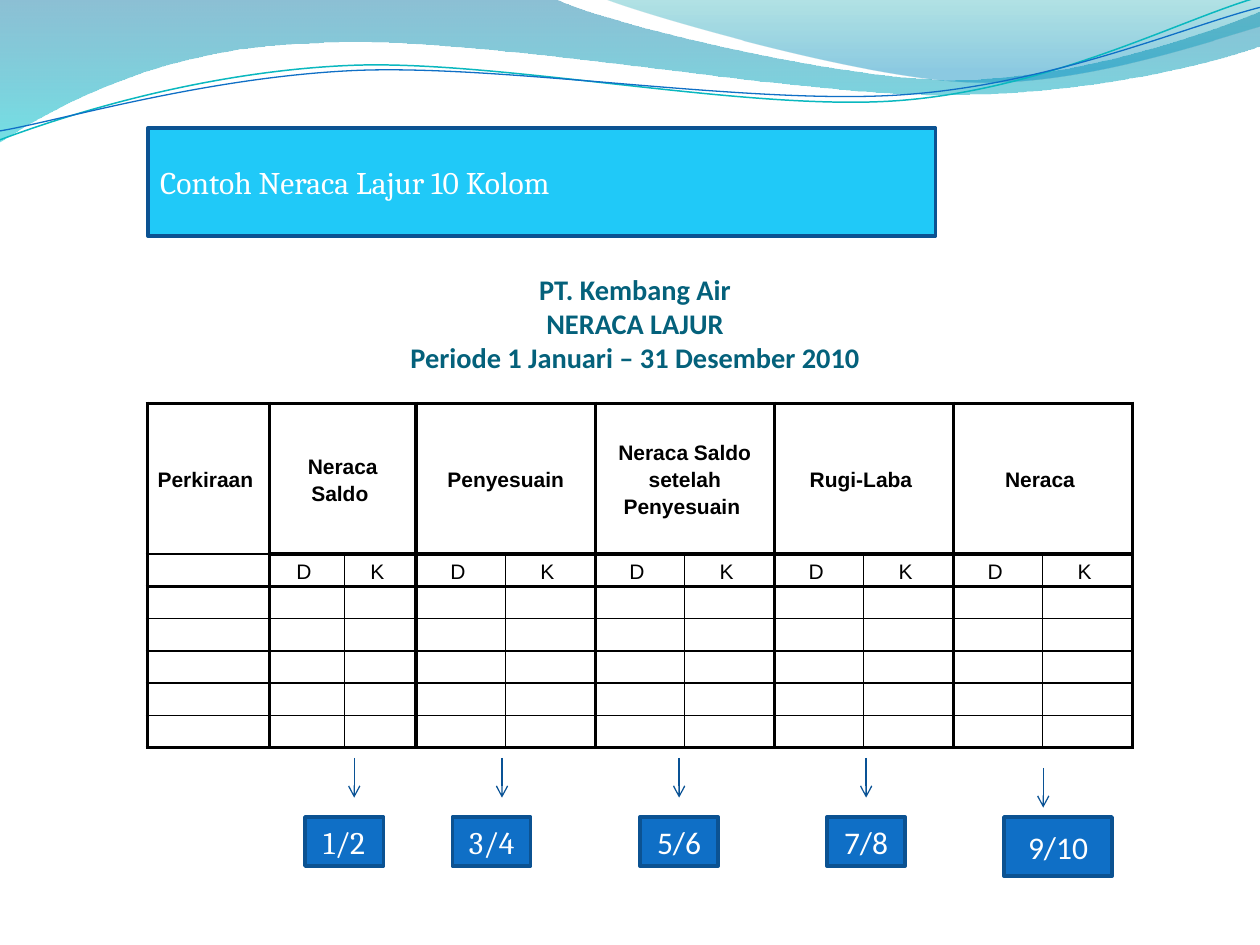
from dataclasses import dataclass

from lxml import etree
from pptx import Presentation
from pptx.dml.color import RGBColor
from pptx.enum.shapes import MSO_CONNECTOR, MSO_SHAPE
from pptx.enum.text import MSO_ANCHOR, MSO_AUTO_SIZE, PP_ALIGN
from pptx.oxml.ns import qn
from pptx.util import Cm, Pt

RECTANGLE = MSO_SHAPE.RECTANGLE
STRAIGHT = MSO_CONNECTOR.STRAIGHT
MIDDLE, BOTTOM = MSO_ANCHOR.MIDDLE, MSO_ANCHOR.BOTTOM
LEFT, CENTER = PP_ALIGN.LEFT, PP_ALIGN.CENTER
NO_FIT = MSO_AUTO_SIZE.NONE


@dataclass(frozen=True)
class Theme:
    """Colours, fonts and type sizes of the slide."""
    title: str = "04617B"
    white: str = "FFFFFF"
    black: str = "000000"
    banner: str = "20C9F8"
    tag: str = "0F6FC6"
    outline: str = "0B5292"
    arrow: str = "095295"
    teal: str = "0AB8BF"
    serif: str = "Cambria"
    sans: str = "Calibri"
    grid: str = "Arial"
    title_size: float = 16.2
    label_size: float = 18
    grid_size: float = 12
    thick: float = 2.25
    thin: float = 1


THEME = Theme()

BACK_WAVE = [(0, 0), (11.18, -0.03), (12.09, 0.43, 16.87, 1.6, 19.25, 1.6),
             (21.67, 1.6, 24.33, 0.66, 25.4, 0.23), (25.43, 0.91),
             (24.97, 1.12, 22.1, 1.93, 18.95, 1.91),
             (15.8, 1.91, 9.7, 0.71, 6.53, 0.86),
             (3.28, 0.91, 1.17, 2.11, -0.03, 2.87)]
FRONT_WAVE = [(12.17, -0.03), (12.93, 0.28, 17.32, 1.57, 19.53, 1.65),
              (21.74, 1.75, 24.41, 0.81, 25.4, 0.53), (25.4, 0)]
TEAL_CURVE = [(0, 2.82), (1.22, 2.36, 4.01, 1.45, 7.04, 1.32),
              (10.03, 1.19, 15.06, 2.26, 18.11, 2.03),
              (21.16, 1.8, 23.83, 0.38, 25.35, -0.05)]
BLUE_CURVE = [(0, 2.64), (1.19, 2.44, 4.17, 1.55, 7.19, 1.42),
              (10.24, 1.3, 15.16, 2.13, 18.21, 1.91),
              (21.23, 1.7, 23.9, 0.53, 25.4, 0.15)]

GROUPS = ["Neraca Saldo ", "Penyesuain", "Neraca Saldo setelah Penyesuain ",
          "Rugi-Laba ", "Neraca "]
COLUMN_WIDTHS = [2.46, 1.51, 1.45] + [1.8, 1.81] * 4
ROW_HEIGHTS = [3.04] + [0.65] * 6

TAGS = [("1/2", THEME.serif, 6.15, 1.58, 0.99),
        ("3/4", THEME.serif, 9.12, 1.58, 0.99),
        ("5/6", THEME.sans, 12.9, 1.58, 0.99),
        ("7/8", THEME.sans, 16.67, 1.58, 0.99),
        ("9/10", THEME.sans, 20.24, 2.18, 1.19)]
ARROWS = [(7.14, 15.28), (10.12, 15.28), (13.69, 15.28), (17.46, 15.28), (21.03, 15.48)]


def color(code):
    """Turn a hex code into a colour."""
    return RGBColor.from_string(code)


def style_text(frame, font, size, code, align, bold=False):
    """Format every paragraph and run of a text frame."""
    for para in frame.paragraphs:
        para.alignment = align
        for span in para.runs:
            span.font.name = font
            span.font.size = Pt(size)
            span.font.bold = bold
            span.font.color.rgb = color(code)


def add_outline(page, segments, close):
    """Draw a freeform whose six-number segments are cubic curves."""
    points = [(Cm(x), Cm(y)) for segment in segments
              for x, y in zip(segment[::2], segment[1::2])]
    builder = page.shapes.build_freeform(*points[0])
    builder.add_line_segments(points[1:], close=close)
    shape = builder.convert_to_shape()
    shape.shadow.inherit = False
    lines = iter(list(shape._element.iter(qn("a:lnTo"))))
    for segment in segments[1:]:
        first = next(lines)
        if len(segment) == 6:
            first.tag_name = None
            curve = etree.Element(qn("a:cubicBezTo"))
            first.addprevious(curve)
            for line in (first, next(lines), next(lines)):
                curve.append(line[0])
                line.getparent().remove(line)
    return shape


def add_wave(page, segments, stops):
    """Add a wave with a translucent gradient from top to bottom."""
    wave = add_outline(page, segments, True)
    wave.line.fill.background()
    wave.fill.gradient()
    wave.fill.gradient_angle = 270
    for stop, (position, code, opacity) in zip(wave.fill.gradient_stops, stops):
        stop.position = position
        stop.color.rgb = color(code)
        for tint in stop._gs.iter(qn("a:srgbClr")):
            etree.SubElement(tint, qn("a:alpha"), val=str(opacity * 1000))


def add_curve(page, segments, code, width):
    """Add an open curved line."""
    curve = add_outline(page, segments, False)
    curve.fill.background()
    curve.line.color.rgb = color(code)
    curve.line.width = Pt(width)


def format_title(page):
    """Place the report heading above the table."""
    title = page.shapes.title
    title.element.getparent().append(title.element)
    title.left, title.top, title.width, title.height = Cm(2.58), Cm(5.56), Cm(20.44), Cm(1.98)
    frame = title.text_frame
    frame.text = "PT. Kembang Air\vNERACA LAJUR\vPeriode 1 Januari – 31 Desember 2010"
    frame.word_wrap = True
    frame.auto_size = NO_FIT
    frame.vertical_anchor = BOTTOM
    frame.margin_left = frame.margin_right = frame.margin_bottom = 0
    style_text(frame, THEME.sans, THEME.title_size, THEME.title, CENTER, True)


def add_box(page, text, font, fill, place, align):
    """Add an outlined rectangle with a white label."""
    box = page.shapes.add_shape(RECTANGLE, *(Cm(length) for length in place))
    box.shadow.inherit = False
    box.fill.solid()
    box.fill.fore_color.rgb = color(fill)
    box.line.color.rgb = color(THEME.outline)
    box.line.width = Pt(2)
    box.text_frame.text = text
    box.text_frame.vertical_anchor = MIDDLE
    style_text(box.text_frame, font, THEME.label_size, THEME.white, align)


def add_arrow(page, x, top):
    """Add a short arrow that points down."""
    arrow = page.shapes.add_connector(STRAIGHT, Cm(x), Cm(top), Cm(x), Cm(top + 0.8))
    arrow.line.color.rgb = color(THEME.arrow)
    arrow.line.width = Pt(0.75)
    etree.SubElement(arrow.line._get_or_add_ln(), qn("a:tailEnd"), type="arrow")
    etree.SubElement(arrow._element.spPr, qn("a:effectLst"))


def set_borders(cell, row, column):
    """Rule thick lines around groups and headings, thin lines elsewhere."""
    heavy = {"L": row == 0 or column == 0 or column % 2 == 1,
             "R": row == 0 or column % 2 == 0,
             "T": row in (0, 2) or (row == 1 and column > 0),
             "B": row in (1, len(ROW_HEIGHTS) - 1) or (row == 0 and column > 0)}
    properties = cell._tc.get_or_add_tcPr()
    for side, is_heavy in heavy.items():
        width = Pt(THEME.thick if is_heavy else THEME.thin)
        line = etree.SubElement(properties, qn(f"a:ln{side}"), w=str(width))
        fill = etree.SubElement(line, qn("a:solidFill"))
        etree.SubElement(fill, qn("a:srgbClr"), val=THEME.black)


def fill_cell(cell, text, bold):
    """Write and format one table cell."""
    cell.fill.background()
    cell.vertical_anchor = MIDDLE
    cell.margin_left = cell.margin_right = Cm(0.18)
    cell.margin_top = cell.margin_bottom = Cm(0.03)
    cell.text_frame.text = text
    para = cell.text_frame.paragraphs[0]
    style_text(cell.text_frame, THEME.grid, THEME.grid_size, THEME.black, CENTER, bold)
    if text:
        para.line_spacing = 1.15
        para.space_after = Pt(10)
    else:
        etree.SubElement(para._p, qn("a:endParaRPr"), sz=str(THEME.grid_size * 100))


def add_worksheet(page):
    """Add the ten-column worksheet table."""
    headings = ["Perkiraan "] + [text for group in GROUPS for text in (group, "")]
    sides = [""] + ["D ", "K "] * len(GROUPS)
    blanks = [[""] * len(COLUMN_WIDTHS)] * (len(ROW_HEIGHTS) - 2)
    table = page.shapes.add_table(len(ROW_HEIGHTS), len(COLUMN_WIDTHS), Cm(2.97), Cm(8.13),
                                  Cm(sum(COLUMN_WIDTHS)), Cm(sum(ROW_HEIGHTS))).table
    table.first_row = table.horz_banding = False
    for column, width in zip(table.columns, COLUMN_WIDTHS):
        column.width = Cm(width)
    for row, height in zip(table.rows, ROW_HEIGHTS):
        row.height = Cm(height)
    for row, texts in enumerate([headings, sides] + blanks):
        for column, text in enumerate(texts):
            cell = table.cell(row, column)
            set_borders(cell, row, column)
            fill_cell(cell, text, row == 0)
    for column in range(1, len(COLUMN_WIDTHS), 2):
        table.cell(0, column).merge(table.cell(0, column + 1))


def main():
    """Build the worksheet slide and save it."""
    deck = Presentation()
    deck.slide_width, deck.slide_height = Cm(25.4), Cm(19.05)
    page = deck.slides.add_slide(deck.slide_layouts[5])
    add_wave(page, BACK_WAVE, [(0, "0074A1", 45), (1, "00C6CF", 55)])
    add_wave(page, FRONT_WAVE, [(0, "00A1A9", 30), (0.8, "008BBF", 45)])
    add_curve(page, TEAL_CURVE, THEME.teal, 0.85)
    add_curve(page, BLUE_CURVE, THEME.tag, 0.75)
    format_title(page)
    add_worksheet(page)
    for x, top in ARROWS:
        add_arrow(page, x, top)
    for text, font, left, width, height in TAGS:
        add_box(page, text, font, THEME.tag, (left, 16.47, width, height), CENTER)
    add_box(page, "Contoh Neraca Lajur 10 Kolom", THEME.serif, THEME.banner,
            (2.98, 2.58, 15.88, 2.18), LEFT)
    deck.save("out.pptx")


if __name__ == "__main__":
    main()
